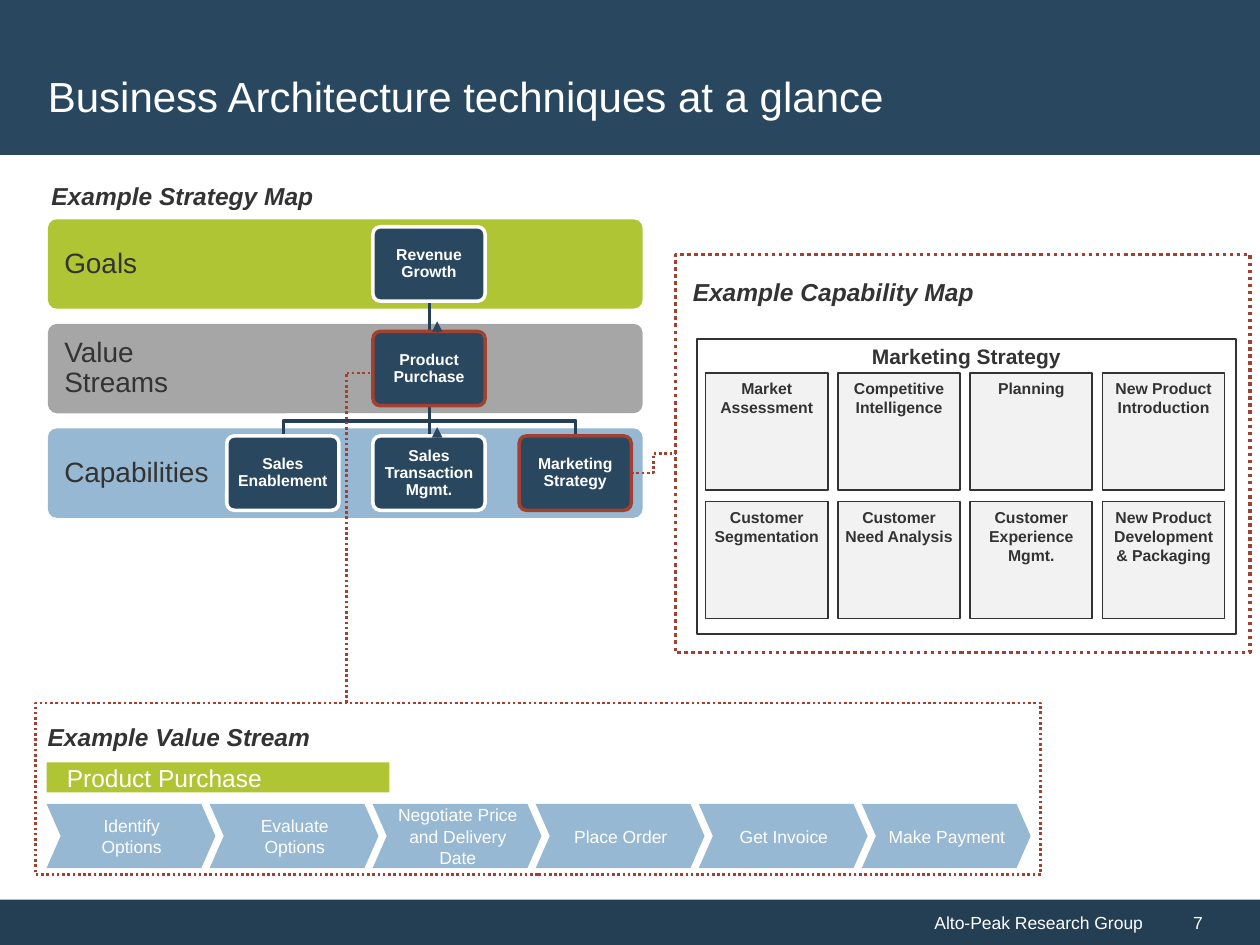
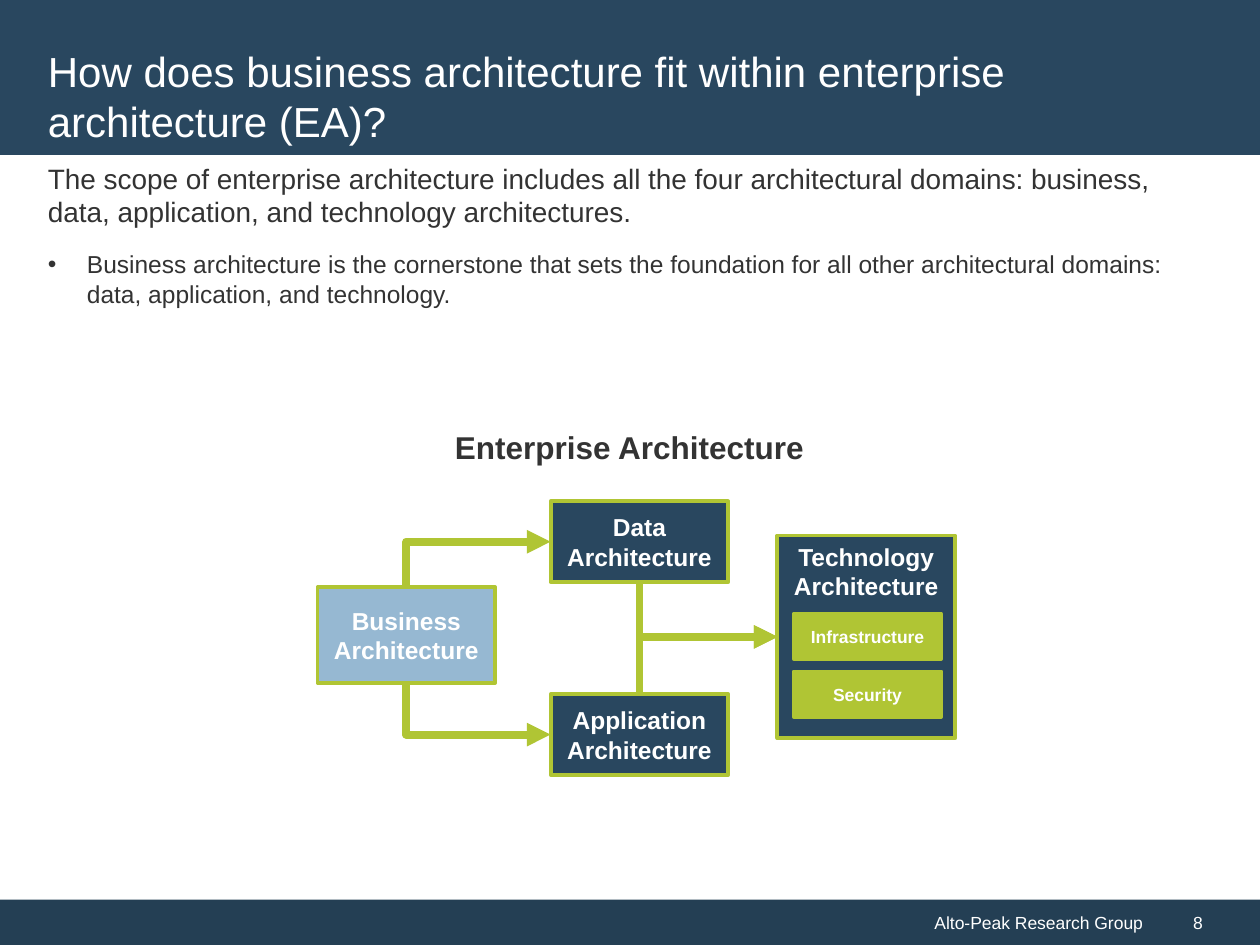
from dataclasses import dataclass

from lxml.etree import SubElement
from pptx import Presentation
from pptx.dml.color import RGBColor
from pptx.enum.dml import MSO_LINE
from pptx.enum.shapes import MSO_CONNECTOR, MSO_SHAPE
from pptx.enum.text import MSO_ANCHOR, MSO_AUTO_SIZE, PP_ALIGN
from pptx.oxml.ns import qn
from pptx.util import Inches, Pt


@dataclass(frozen=True)
class Theme:
    font: str = "Arial"
    navy: str = "29475F"
    foot: str = "243F54"
    link: str = "254056"
    sky: str = "96B8D2"
    lime: str = "B0C534"
    gray: str = "A6A6A6"
    pale: str = "F2F2F2"
    rust: str = "A24130"
    ink: str = "333333"
    white: str = "FFFFFF"
    title: int = 24
    large: int = 18
    lead: int = 16
    body: int = 14
    head: int = 12
    small: int = 10
    tiny: int = 9


T = Theme()

# Content
OWNER = "Alto-Peak Research Group"
TITLES = {
    7: "Business Architecture techniques at a glance",
    8: "How does business architecture fit within enterprise architecture (EA)?",
}
LAYERS = [("Goals", T.lime), ("Value Streams", T.gray), ("Capabilities", T.sky)]
NODES = [  # text, column, row, outline
    ("Revenue Growth", 1, 0, T.white),
    ("Product Purchase", 1, 1, T.rust),
    ("Sales Enablement", 0, 2, T.white),
    ("Sales Transaction Mgmt.", 1, 2, T.white),
    ("Marketing Strategy", 2, 2, T.rust),
]
STEPS = ["Identify Options", "Evaluate Options", "Negotiate Price and Delivery Date",
         "Place Order", "Get Invoice", "Make Payment"]
SKILLS = [
    ["Market Assessment", "Competitive Intelligence", "Planning",
     "New Product Introduction"],
    ["Customer Segmentation", "Customer Need Analysis", "Customer Experience Mgmt.",
     "New Product Development & Packaging"],
]
HEADS = [("Example Strategy Map", 0.31, 1.39), ("Example Capability Map", 5.4, 2.15),
         ("Example Value Stream", 0.28, 5.68)]
SCOPE = ("The scope of enterprise architecture includes all the four architectural "
         "domains: business, data, application, and technology architectures.")
POINT = ("Business architecture is the cornerstone that sets the foundation for all "
         "other architectural domains: data, application, and technology.")
DOMAINS = [  # text, place, fill
    ("Business Architecture", (2.52, 4.66, 1.41, 0.76), T.sky),
    ("Data Architecture", (4.37, 3.98, 1.41, 0.64), T.navy),
    ("Application Architecture", (4.37, 5.51, 1.41, 0.64), T.navy),
    ("Technology Architecture", (6.17, 4.25, 1.41, 1.61), T.navy),
]
TOP, LEFT, BOTTOM, RIGHT = range(4)
FLOWS = [("Business", TOP, "Data"), ("Business", BOTTOM, "Application"),
         ("Data", BOTTOM, "Technology"), ("Application", TOP, "Technology")]
PARTS = ["Infrastructure", "Security"]


# Helpers
def rgb(code):
    return RGBColor.from_string(code)


def style(par, size, color, bold=False, slant=False, align=PP_ALIGN.LEFT):
    font = par.font
    font.name, font.size, font.bold, font.italic = T.font, Pt(size), bold, slant
    font.color.rgb = rgb(color)
    par.alignment = align


def write(shape, text, size, color=T.white, anchor=MSO_ANCHOR.MIDDLE,
          inset=(0.1, 0.05, 0.1, 0.05), space=None, align=PP_ALIGN.CENTER, **look):
    frame = shape.text_frame
    frame.word_wrap, frame.vertical_anchor = True, anchor
    (frame.margin_left, frame.margin_top,
     frame.margin_right, frame.margin_bottom) = map(Inches, inset)
    par = frame.paragraphs[0]
    par.text = text
    style(par, size, color, align=align, **look)
    if space:
        par.line_spacing = space


def stroke(line, color, width, dots=False, arrow=False):
    line.color.rgb, line.width = rgb(color), Pt(width)
    if dots:
        line.dash_style = MSO_LINE.ROUND_DOT
    if arrow:
        SubElement(line._get_or_add_ln(), qn("a:tailEnd"), type="triangle")


def box(slide, place, fill=None, edge=None, width=1, dots=False,
        kind=MSO_SHAPE.RECTANGLE, bend=None):
    shape = slide.shapes.add_shape(kind, *map(Inches, place))
    shape.shadow.inherit = False
    if bend is not None:
        shape.adjustments[0] = bend
    if fill:
        shape.fill.solid()
        shape.fill.fore_color.rgb = rgb(fill)
    else:
        shape.fill.background()
    if edge:
        stroke(shape.line, edge, width, dots)
    else:
        shape.line.fill.background()
    return shape


def label(slide, place, text, size, **look):
    shape = slide.shapes.add_textbox(*map(Inches, place))
    write(shape, text, size, T.ink, MSO_ANCHOR.TOP, **look)


def wire(slide, start, end, color, width, kind=MSO_CONNECTOR.STRAIGHT, **look):
    line = slide.shapes.add_connector(kind, *map(Inches, start + end))
    SubElement(line.element.spPr, qn("a:effectLst"))
    stroke(line.line, color, width, **look)
    return line


def route(slide, points, color, width):
    first, *rest = [tuple(map(Inches, point)) for point in points]
    draft = slide.shapes.build_freeform(*first)
    draft.add_line_segments(rest, close=False)
    shape = draft.convert_to_shape()
    shape.shadow.inherit = False
    shape.fill.background()
    stroke(shape.line, color, width)


def flow(slide, start, site, end):
    """Arrow that leaves upright and enters the left side of the end box."""
    line = wire(slide, (0, 0), (0, 0), T.lime, 4.5, MSO_CONNECTOR.ELBOW, arrow=True)
    line.begin_connect(start, site)
    line.end_connect(end, LEFT)
    x, y = line.begin_x, line.begin_y
    run, rise = line.end_x - x, line.end_y - y
    wide = abs(rise)
    line.left, line.top = x + (run - wide) // 2, y + (rise - run) // 2
    line.width, line.height = wide, run
    frame = line.element.spPr.find(qn("a:xfrm"))
    frame.set("rot", str((90 if rise < 0 else 270) * 60000))
    frame.set("flipH", "1")
    frame.set("flipV", "1" if rise < 0 else "0")
    line.element.spPr.find(qn("a:prstGeom")).set("prst", "bentConnector2")


def begin(deck, layout, number):
    """Slide with the shared title band and footer."""
    slide = deck.slides.add_slide(deck.slide_layouts[layout])
    band = box(slide, (0, 0, 10, 1.23), T.navy)
    band.element.getparent().insert(2, band.element)
    title = slide.shapes.title
    title.left, title.top, title.width, title.height = map(
        Inches, (0.28, 0.28, 9.43, 0.96))
    write(title, TITLES[number], T.title, align=PP_ALIGN.LEFT)
    title.text_frame.auto_size = MSO_AUTO_SIZE.NONE
    write(box(slide, (0, 7.14, 10, 0.37), T.foot), OWNER, T.small,
          inset=(0.1, 0.05, 0.93, 0.05), align=PP_ALIGN.RIGHT)
    write(box(slide, (9.17, 7.14, 0.83, 0.37)), str(number), T.small,
          inset=(0.3, 0.05, 0.1, 0.05), align=PP_ALIGN.LEFT)
    return slide


# Slide parts
def stream(slide):
    box(slide, (0.28, 5.58, 7.98, 1.36), None, T.rust, 1.5, True)
    write(box(slide, (0.37, 6.05, 2.72, 0.24), T.lime), "Product Purchase", T.body,
          inset=(0.16, 0.05, 0.16, 0.05), align=PP_ALIGN.LEFT)
    pitch = (6.84 - 0.37) / (len(STEPS) - 1)
    for i, step in enumerate(STEPS):
        shape = box(slide, (0.37 + i * pitch, 6.38, 1.34, 0.51), T.sky,
                    kind=MSO_SHAPE.CHEVRON, bend=0.22)
        write(shape, step, T.small, inset=(0.09, 0.05, 0.08, 0.05))


def strategy(slide):
    pitch = 0.83
    for row, (name, fill) in enumerate(LAYERS):
        band = box(slide, (0.38, 1.74 + row * pitch, 4.72, 0.71), fill,
                   kind=MSO_SHAPE.ROUNDED_RECTANGLE, bend=0.1)
        write(band, name, T.lead, T.ink, inset=(0.11, 0.12, 3.3, 0.12),
              space=0.9, align=PP_ALIGN.LEFT)
    wire(slide, (3.41, 2.39), (3.41, 2.63), T.link, 2)
    wire(slide, (3.41, 3.23), (3.41, 3.46), T.link, 2)
    for x in (2.25, 4.57):
        route(slide, [(3.41, 3.23), (3.41, 3.34), (x, 3.34), (x, 3.46)], T.link, 2)
    nodes = {}
    for name, col, row, edge in NODES:
        node = box(slide, (1.8 + col * 1.16, 1.8 + row * pitch, 0.89, 0.59), T.navy,
                   edge, 2, kind=MSO_SHAPE.ROUNDED_RECTANGLE, bend=0.1)
        write(node, name, T.tiny, inset=(0.05,) * 4, space=0.9, bold=True)
        nodes[name] = node
    for y in (2.74, 3.58):
        wire(slide, (3.47, y), (3.47, y - 0.19), T.navy, 0.75, arrow=True)
    return nodes


def skills(slide):
    panel = box(slide, (5.53, 2.69, 4.28, 2.34), T.white, T.ink)
    write(panel, "Marketing Strategy", T.head, T.ink, MSO_ANCHOR.TOP,
          (0.05, 0.04, 0.05, 0.04), bold=True)
    for row, names in enumerate(SKILLS):
        for col, name in enumerate(names):
            cell = box(slide, (5.6 + col * 1.05, 2.96 + row * 1.02, 0.97, 0.93),
                       T.pale, T.ink)
            write(cell, name, T.tiny, T.ink, MSO_ANCHOR.TOP, (0.05,) * 4, bold=True)
    return box(slide, (5.36, 2.02, 4.56, 3.16), None, T.rust, 2, True)


def glance(deck):
    slide = begin(deck, 5, 7)
    stream(slide)
    nodes = strategy(slide)
    for start, end in [((2.75, 2.96), (2.96, 2.96)), ((2.75, 5.58), (2.75, 2.96))]:
        wire(slide, start, end, T.rust, 1.5, dots=True)
    frame = skills(slide)
    line = wire(slide, (5.01, 3.73), (5.36, 3.6), T.rust, 1.5,
                MSO_CONNECTOR.ELBOW, dots=True)
    line.begin_connect(nodes["Marketing Strategy"], RIGHT)
    line.end_connect(frame, LEFT)
    for text, x, y in HEADS:
        label(slide, (x, y, 3.84, 0.34), text, T.body, bold=True, slant=True,
              align=PP_ALIGN.LEFT)


def scope(slide):
    body = slide.placeholders[1]
    body.left, body.top, body.width, body.height = map(
        Inches, (0.28, 1.23, 9.43, 1.28))
    write(body, SCOPE, T.lead, T.ink, MSO_ANCHOR.TOP, align=PP_ALIGN.LEFT)
    body.text_frame.auto_size = MSO_AUTO_SIZE.NONE
    lead = body.text_frame.paragraphs[0]
    point = body.text_frame.add_paragraph()
    point.text = POINT
    style(point, T.body, T.ink)
    for par, hang, mark in [(lead, 0, None), (point, Inches(0.31), "•")]:
        par.space_before, par.space_after = Pt(0), Pt(0 if mark else 12)
        props = par._p.get_or_add_pPr()
        props.set("marL", str(hang))
        props.set("indent", str(-hang))
        bullet = props.makeelement(qn("a:buChar" if mark else "a:buNone"))
        if mark:
            bullet.set("char", mark)
        props.find(qn("a:defRPr")).addprevious(bullet)


def domains(deck):
    slide = begin(deck, 1, 8)
    scope(slide)
    boxes = {}
    for name, place, fill in DOMAINS:
        shape = box(slide, place, fill, T.lime, 2.25)
        key = name.split()[0]
        anchor = MSO_ANCHOR.TOP if key == "Technology" else MSO_ANCHOR.MIDDLE
        write(shape, name, T.body, anchor=anchor, bold=True)
        boxes[key] = shape
    for start, site, end in FLOWS:
        flow(slide, boxes[start], site, boxes[end])
    for i, name in enumerate(PARTS):
        part = box(slide, (6.3, 4.87 + i * 0.46, 1.17, 0.36), T.lime, T.lime, 2.25)
        write(part, name, T.small, bold=True)
    label(slide, (2, 3.35, 5.99, 3), "Enterprise Architecture", T.large, bold=True)


def main():
    deck = Presentation()
    deck.slide_width, deck.slide_height = Inches(10), Inches(7.5)
    glance(deck)
    domains(deck)
    deck.save("out.pptx")


if __name__ == "__main__":
    main()
